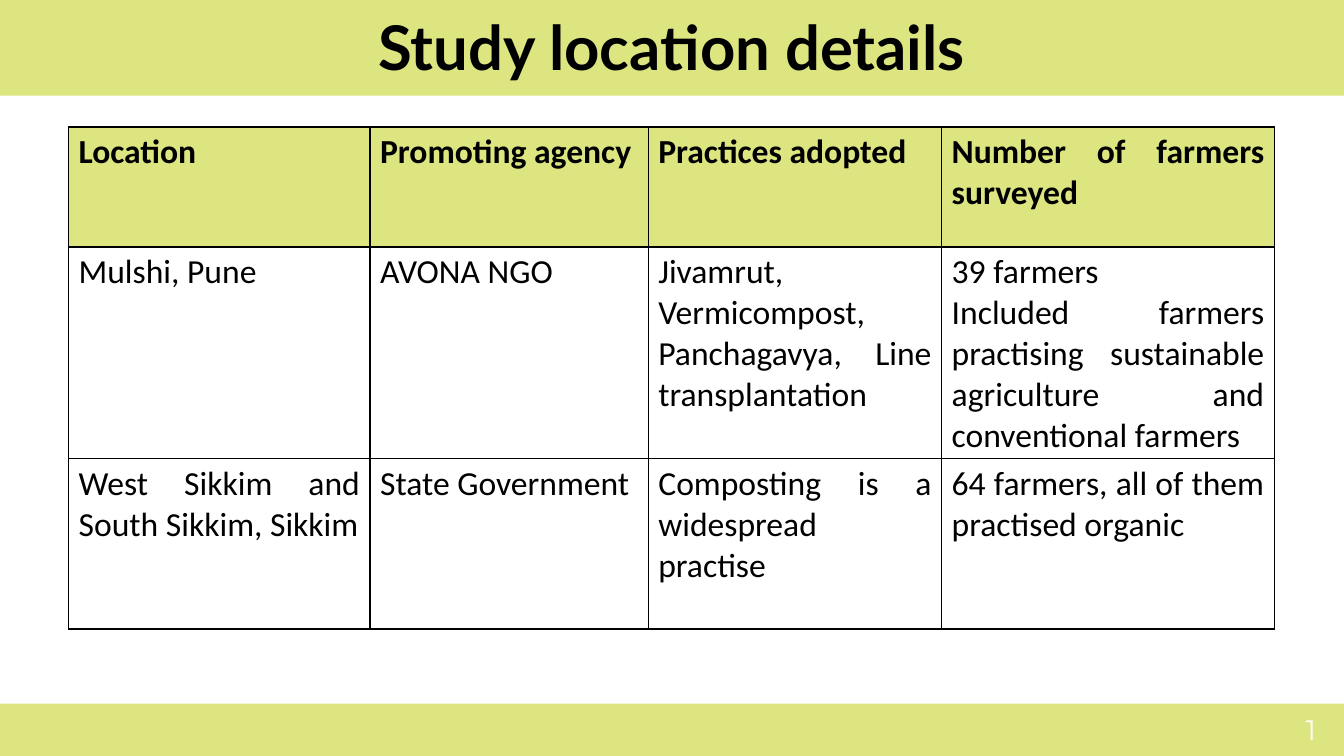
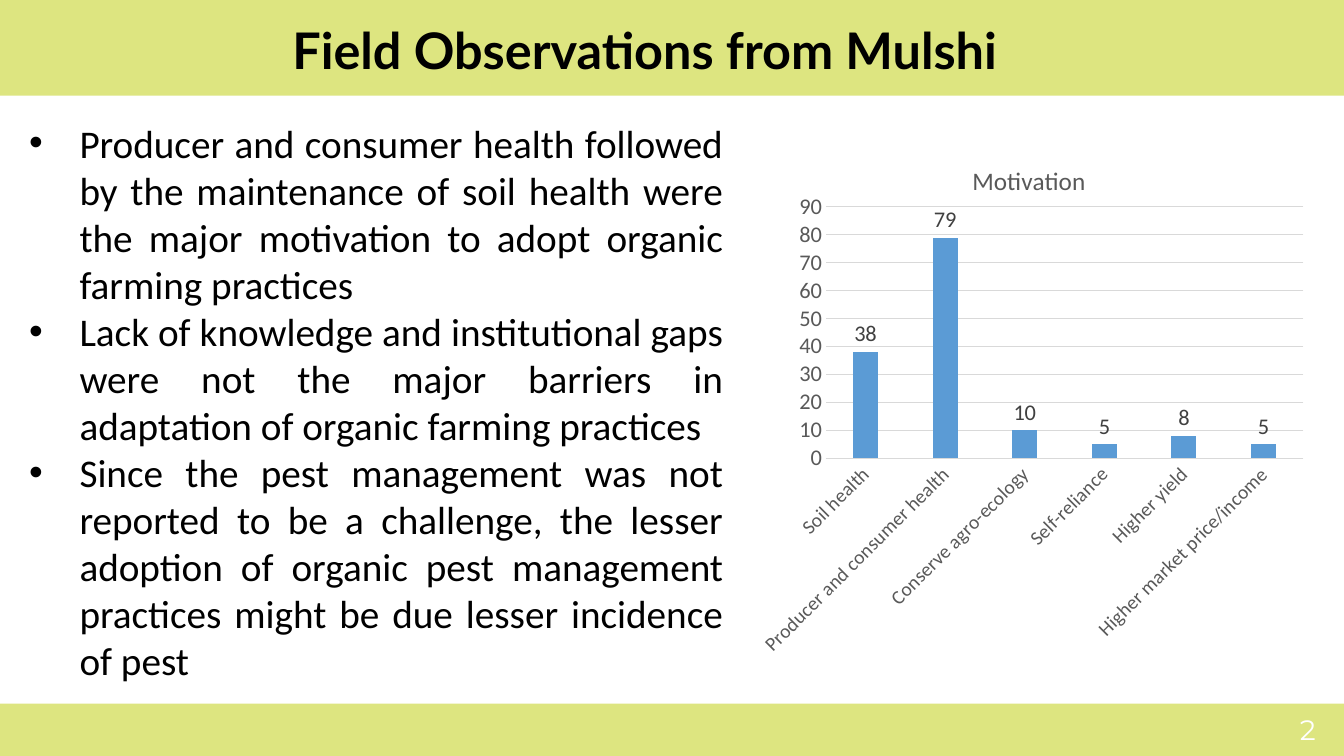
from lxml import etree
from pptx import Presentation
from pptx.chart.data import CategoryChartData
from pptx.dml.color import RGBColor
from pptx.enum.chart import XL_CHART_TYPE as ChartType
from pptx.enum.chart import XL_LABEL_POSITION as LabelPos
from pptx.enum.chart import XL_TICK_MARK as TickMark
from pptx.enum.shapes import MSO_SHAPE as Preset
from pptx.enum.text import MSO_ANCHOR as Anchor
from pptx.enum.text import MSO_AUTO_SIZE as AutoSize
from pptx.enum.text import PP_ALIGN as Align
from pptx.oxml.ns import qn
from pptx.util import Inches, Pt

LIME = RGBColor(0xDD, 0xE5, 0x80)
BLACK = RGBColor(0, 0, 0)
WHITE = RGBColor(0xFF, 0xFF, 0xFF)
BLUE = RGBColor(0x5B, 0x9B, 0xD5)
AXIS_GREY = RGBColor(0x59, 0x59, 0x59)
LABEL_GREY = RGBColor(0x40, 0x40, 0x40)
GRID_GREY = RGBColor(0xD9, 0xD9, 0xD9)

TITLE_FONT, BODY_FONT, NUMBER_FONT = "Lato", "Calibri", "Montserrat"
TITLE_ONLY = 5
TITLE_BAND = (0, -0.05, 13.33, 1)
FOOTER_BAND = (-0.01, 6.98, 13.36, 0.52)
NUMBER_BOX = (10.15, 7.04, 3, 0.4)


def set_font(font, size, color=BLACK, name=BODY_FONT, bold=False):
    font.size, font.name, font.bold = Pt(size), name, bold
    font.color.rgb = color


def set_line(line, color, width=0.75):
    line.color.rgb = color
    line.width = Pt(width)


def place(parent, index, **fractions):
    """Lay out a chart part by hand, in fractions of the chart area."""
    for automatic in parent.findall(qn("c:layout")):
        parent.remove(automatic)
    layout = etree.Element(qn("c:layout"))
    manual = etree.SubElement(layout, qn("c:manualLayout"))
    if "w" in fractions:
        etree.SubElement(manual, qn("c:layoutTarget"), val="inner")
    for axis in "xy":
        etree.SubElement(manual, qn(f"c:{axis}Mode"), val="edge")
    for key, value in fractions.items():
        etree.SubElement(manual, qn(f"c:{key}"), val=str(value))
    parent.insert(index, layout)


class Deck:
    """Holds the shared style and the slide being built."""

    def __init__(self):
        self.prs = Presentation()
        self.prs.slide_width, self.prs.slide_height = Inches(13.33), Inches(7.5)
        self.slide = None

    def new_slide(self, title, size=44, box=TITLE_BAND):
        self.slide = self.prs.slides.add_slide(self.prs.slide_layouts[TITLE_ONLY])
        for band in (FOOTER_BAND, TITLE_BAND):
            self.band(band)
        self.title(title, size, box)
        self.slide_number()

    def band(self, box):
        """Draw a lime band behind everything else."""
        band = self.slide.shapes.add_shape(Preset.RECTANGLE, *map(Inches, box))
        band.shadow.inherit = False
        band.fill.solid()
        band.fill.fore_color.rgb = LIME
        band.line.fill.background()
        self.slide.shapes.element.insert(2, band.element)

    def title(self, text, size, box):
        title = self.slide.shapes.title
        title.left, title.top, title.width, title.height = map(Inches, box)
        frame = title.text_frame
        frame.text = text
        frame.auto_size = AutoSize.NONE
        frame.vertical_anchor = Anchor.MIDDLE
        heading = frame.paragraphs[0]
        heading.alignment = Align.CENTER
        set_font(heading.font, size, name=TITLE_FONT, bold=True)

    def text_box(self, box):
        frame = self.slide.shapes.add_textbox(*map(Inches, box)).text_frame
        frame.word_wrap = True
        return frame

    def slide_number(self):
        frame = self.text_box(NUMBER_BOX)
        frame.vertical_anchor = Anchor.MIDDLE
        number = frame.paragraphs[0]
        number.alignment = Align.RIGHT
        run = number.add_run()
        run.text = str(len(self.prs.slides))
        set_font(run.font, 20, WHITE, NUMBER_FONT)

    def bullets(self, points, box, size):
        frame = self.text_box(box)
        frame.text = "\n".join(points)
        indent = Inches(0.5)
        for point in frame.paragraphs:
            point.alignment = Align.JUSTIFY
            set_font(point.font, size)
            props = point.font._element.getparent()
            props.set("marL", str(indent))
            props.set("indent", str(-indent))
            bullet_font = etree.Element(qn("a:buFont"), typeface="Arial")
            bullet = etree.Element(qn("a:buChar"), char="•")
            props.insert(0, bullet_font)
            props.insert(1, bullet)

    def table(self, rows, left, top, widths, heights, size):
        holder = self.slide.shapes.add_table(
            len(rows), len(widths), Inches(left), Inches(top),
            Inches(sum(widths)), Inches(sum(heights)))
        table = holder.table
        table.first_row = table.horz_banding = False
        for column, width in zip(table.columns, widths):
            column.width = Inches(width)
        for r, (texts, height) in enumerate(zip(rows, heights)):
            table.rows[r].height = Inches(height)
            for c, text in enumerate(texts):
                self.cell(table.cell(r, c), text, size, header=r == 0)
        for props in holder.element.iter(qn("a:tcPr")):
            self.borders(props)

    def cell(self, cell, text, size, header):
        cell.text = text
        if header:
            cell.fill.solid()
            cell.fill.fore_color.rgb = LIME
        else:
            cell.fill.background()
        for paragraph in cell.text_frame.paragraphs:
            paragraph.alignment = Align.JUSTIFY
            set_font(paragraph.font, size, bold=header)

    def borders(self, props):
        for index, side in enumerate("LRTB"):
            line = etree.Element(qn(f"a:ln{side}"), w=str(Pt(1)))
            fill = etree.SubElement(line, qn("a:solidFill"))
            etree.SubElement(fill, qn("a:srgbClr"), val=str(BLACK))
            props.insert(index, line)

    def column_chart(self, title, values, box):
        data = CategoryChartData(number_format="0")
        data.categories = list(values)
        data.add_series("Series 1", list(values.values()))
        chart = self.slide.shapes.add_chart(
            ChartType.COLUMN_CLUSTERED, *map(Inches, box), data).chart
        chart.has_legend = False
        set_font(chart.font, 16)

        chart.has_title = True
        heading = chart.chart_title.text_frame
        heading.text = title
        set_font(heading.paragraphs[0].font, 18, AXIS_GREY)
        place(chart.chart_title.element, 1, x=0.39, y=0.05)
        place(chart.element.find(f".//{qn('c:plotArea')}"), 0,
              x=0.14, y=0.14, w=0.84, h=0.47)

        plot = chart.plots[0]
        plot.gap_width, plot.overlap = 219, -27
        plot.vary_by_categories = False
        fill = plot.series[0].format.fill
        fill.solid()
        fill.fore_color.rgb = BLUE
        plot.has_data_labels = True
        labels = plot.data_labels
        labels.show_value = True
        labels.position = LabelPos.OUTSIDE_END
        labels.number_format, labels.number_format_is_linked = "0", False
        set_font(labels.font, 16, LABEL_GREY)
        self.axes(chart)

    def axes(self, chart):
        categories, scale = chart.category_axis, chart.value_axis
        for axis, size in ((categories, 14), (scale, 16)):
            axis.major_tick_mark = axis.minor_tick_mark = TickMark.NONE
            set_font(axis.tick_labels.font, size, AXIS_GREY)
        set_line(categories.format.line, GRID_GREY)
        slant = chart.element.find(
            "/".join([".//" + qn("c:catAx"), qn("c:txPr"), qn("a:bodyPr")]))
        slant.set("rot", str(-45 * 60000))
        slant.set("vert", "horz")

        scale.minimum_scale, scale.maximum_scale, scale.major_unit = 0, 90, 10
        scale.tick_labels.number_format = "0"
        scale.tick_labels.number_format_is_linked = False
        scale.format.line.fill.background()
        set_line(scale.major_gridlines.format.line, GRID_GREY)


def main():
    deck = Deck()

    deck.new_slide("Study location details")
    deck.table(
        [
            ["Location", "Promoting agency", "Practices adopted",
             "Number of farmers surveyed"],
            ["Mulshi, Pune", "AVONA NGO",
             "Jivamrut, Vermicompost, Panchagavya, Line transplantation",
             "39 farmers\nIncluded farmers practising sustainable agriculture "
             "and conventional farmers"],
            ["West Sikkim and South Sikkim, Sikkim", "State Government",
             "Composting is a widespread practise",
             "64 farmers, all of them practised organic"],
        ],
        left=0.68, top=1.26, widths=[2.99, 2.76, 2.91, 3.3],
        heights=[1.19, 2.1, 1.69], size=24)

    deck.new_slide("Field Observations from Mulshi", 36, (2.57, 0.13, 7.65, 0.71))
    deck.bullets(
        [
            "Producer and consumer health followed by the maintenance of soil "
            "health were the major motivation to adopt organic farming practices",
            "Lack of knowledge and institutional gaps were not the major "
            "barriers in adaptation of organic farming practices",
            "Since the pest management was not reported to be a challenge, the "
            "lesser adoption of organic pest management practices might be due "
            "lesser incidence of pest",
        ],
        (0.19, 1.13, 7.08, 5.76), 28)
    deck.column_chart(
        "Motivation",
        {
            "Soil health": 38,
            "Producer and consumer health": 79,
            "Conserve agro-ecology": 10,
            "Self-reliance": 5,
            "Higher yield": 8,
            "Higher market price/income": 5,
        },
        (7.4, 1.31, 5.64, 5.31))

    deck.prs.save("out.pptx")


if __name__ == "__main__":
    main()
